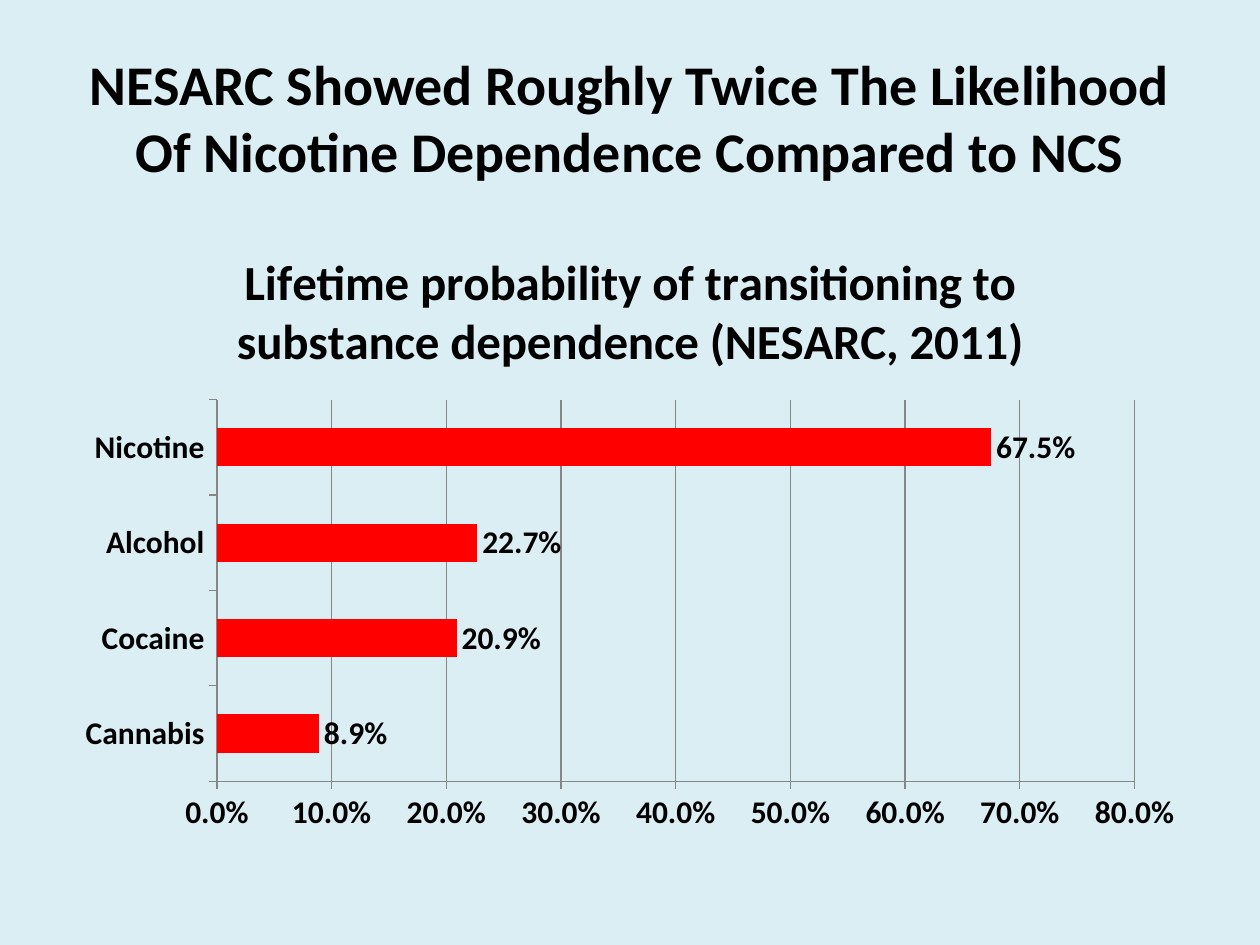
import dataclasses

import pptx
import pptx.chart.data
import pptx.dml.color
import pptx.enum.chart
import pptx.enum.text
import pptx.util
from pptx.util import Inches


@dataclasses.dataclass(frozen=True)
class Theme:
    font: str = "Calibri"
    background: str = "DBEEF4"
    text: str = "000000"
    bar: str = "FF0000"
    line: str = "868686"
    title_size: int = 32
    chart_title_size: int = 28
    label_size: int = 18


THEME = Theme()
PERCENT = "0.0%"
PROBABILITIES = {
    "Cannabis": 0.089,
    "Cocaine": 0.209,
    "Alcohol": 0.227,
    "Nicotine": 0.675,
}


def rgb(value):
    return pptx.dml.color.RGBColor.from_string(value)


def format_font(font, size):
    font.name = THEME.font
    font.size = pptx.util.Pt(size)
    font.bold = True
    font.color.rgb = rgb(THEME.text)


def write_text(frame, text, *, size, align=pptx.enum.text.PP_ALIGN.CENTER):
    paragraph = frame.paragraphs[0]
    paragraph.alignment = align
    run = paragraph.add_run()
    run.text = text
    format_font(run.font, size)


def add_title(slide, text):
    title = slide.shapes.title
    title.left, title.top = Inches(0.5), Inches(0.3)
    title.width, title.height = Inches(9), Inches(1.25)
    frame = title.text_frame
    frame.word_wrap = True
    frame.vertical_anchor = pptx.enum.text.MSO_ANCHOR.MIDDLE
    write_text(frame, text, size=THEME.title_size)


def format_line(line):
    line.color.rgb = rgb(THEME.line)
    line.width = pptx.util.Pt(0.75)


def format_axis(axis):
    axis.major_tick_mark = pptx.enum.chart.XL_TICK_MARK.OUTSIDE
    axis.minor_tick_mark = pptx.enum.chart.XL_TICK_MARK.NONE
    format_line(axis.format.line)
    format_font(axis.tick_labels.font, THEME.label_size)


def add_probability_chart(slide, title):
    chart_data = pptx.chart.data.CategoryChartData(number_format=PERCENT)
    chart_data.categories = list(PROBABILITIES)
    chart_data.add_series("Series 1", list(PROBABILITIES.values()))
    chart = slide.shapes.add_chart(
        pptx.enum.chart.XL_CHART_TYPE.BAR_CLUSTERED,
        Inches(0.5), Inches(1.75), Inches(9), Inches(4.95), chart_data,
    ).chart
    format_font(chart.font, THEME.label_size)
    chart.has_legend = False
    chart.has_title = True
    chart.chart_title.include_in_layout = False
    write_text(chart.chart_title.text_frame, title, size=THEME.chart_title_size)

    format_axis(chart.category_axis)
    probability_axis = chart.value_axis
    format_axis(probability_axis)
    probability_axis.minimum_scale = 0
    probability_axis.maximum_scale = 0.8
    probability_axis.major_unit = 0.1
    probability_axis.has_major_gridlines = True
    format_line(probability_axis.major_gridlines.format.line)
    probability_axis.tick_labels.number_format = PERCENT
    probability_axis.tick_labels.number_format_is_linked = False

    plot = chart.plots[0]
    plot.gap_width = 150
    plot.vary_by_categories = False
    bars = plot.series[0]
    bars.format.fill.solid()
    bars.format.fill.fore_color.rgb = rgb(THEME.bar)
    labels = bars.data_labels
    labels.show_value = True
    labels.position = pptx.enum.chart.XL_LABEL_POSITION.OUTSIDE_END
    labels.number_format = PERCENT
    labels.number_format_is_linked = False
    format_font(labels.font, THEME.label_size)


def main():
    presentation = pptx.Presentation()
    presentation.slide_width = Inches(10)
    presentation.slide_height = Inches(7.5)
    slide = presentation.slides.add_slide(presentation.slide_layouts[5])
    slide.background.fill.solid()
    slide.background.fill.fore_color.rgb = rgb(THEME.background)
    add_title(
        slide,
        "NESARC Showed Roughly Twice The Likelihood "
        "Of Nicotine Dependence Compared to NCS",
    )
    add_probability_chart(
        slide,
        "Lifetime probability of transitioning to "
        "substance dependence (NESARC, 2011)",
    )
    presentation.save("out.pptx")


if __name__ == "__main__":
    main()
